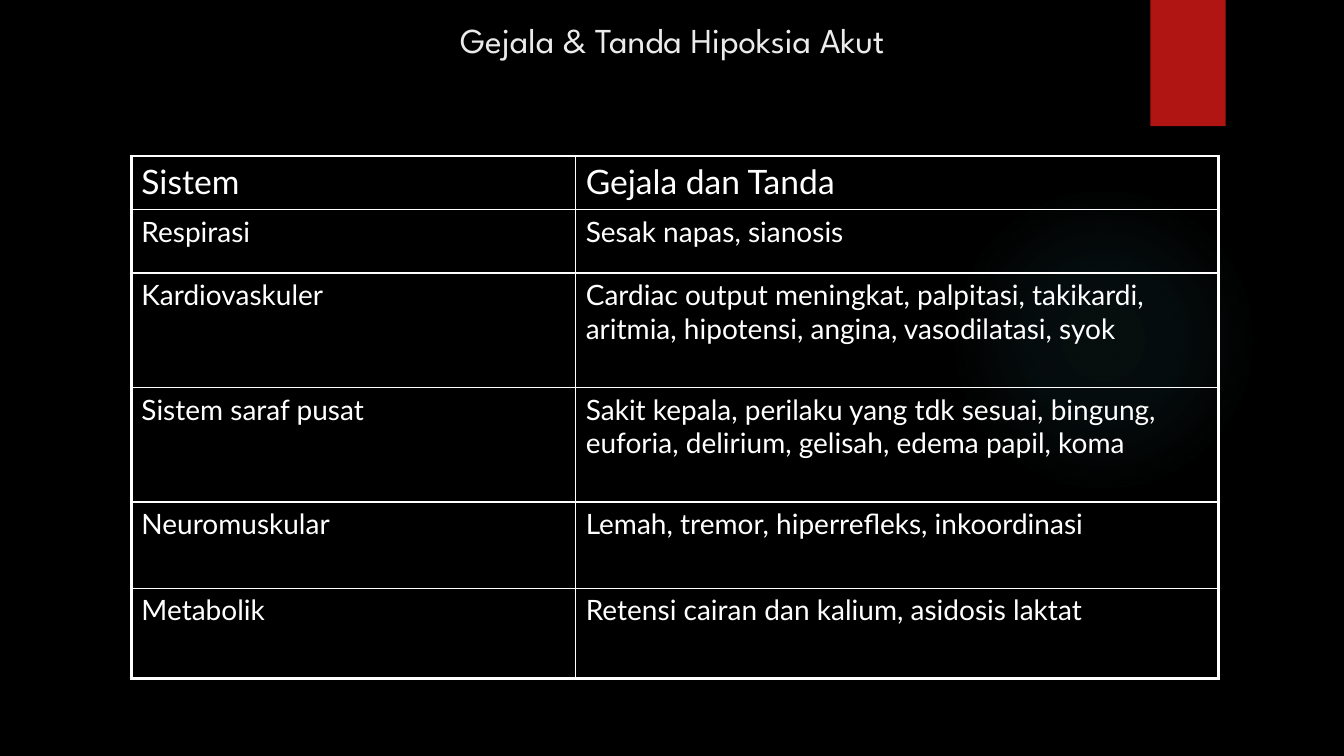
from lxml import etree
from pptx import Presentation
from pptx import util as u
from pptx.dml.color import RGBColor
from pptx.enum import shapes, text
from pptx.oxml import ns

BLACK = RGBColor(0x00, 0x00, 0x00)
WHITE = RGBColor(0xFF, 0xFF, 0xFF)
TITLE_GREY = RGBColor(0xEB, 0xEB, 0xEB)
RED = RGBColor(0xB0, 0x15, 0x13)
TEAL = RGBColor(0x50, 0xB9, 0xC1)

SYMPTOMS = [
    ("Sistem", "Gejala dan Tanda"),
    ("Respirasi", "Sesak napas, sianosis"),
    ("Kardiovaskuler", "Cardiac output meningkat, palpitasi, takikardi, "
     "aritmia, hipotensi, angina, vasodilatasi, syok"),
    ("Sistem saraf pusat", "Sakit kepala, perilaku yang tdk sesuai, bingung, "
     "euforia, delirium, gelisah, edema papil, koma"),
    ("Neuromuskular", "Lemah, tremor, hiperrefleks, inkoordinasi"),
    ("Metabolik", "Retensi cairan dan kalium, asidosis laktat"),
]
COLUMN_WIDTHS = [11.2, 16.2]
ROW_HEIGHTS = [1.35, 1.6, 2.88, 2.89, 2.17, 2.27]


def add_child(parent, tag, **attributes):
    return etree.SubElement(parent, ns.qn(tag), attributes)


class SlideBuilder:
    title_font, body_font = "League Spartan", "Lato"
    title_size, header_size, body_size = u.Pt(25), u.Pt(24), u.Pt(20)
    outer_line, inner_line = u.Pt(2.25), u.Pt(1)

    def __init__(self, presentation):
        self.slide = presentation.slides.add_slide(presentation.slide_layouts[6])
        self.slide.background.fill.solid()
        self.slide.background.fill.fore_color.rgb = BLACK

    def style(self, paragraph, font, size, color):
        paragraph.font.name = font
        paragraph.font.size = size
        paragraph.font.color.rgb = color

    def shape(self, kind, left, top, width, height, color):
        shape = self.slide.shapes.add_shape(
            kind, u.Cm(left), u.Cm(top), u.Cm(width), u.Cm(height))
        shape.shadow.inherit = False
        shape.line.fill.background()
        shape.fill.solid()
        shape.fill.fore_color.rgb = color
        return shape

    def glow(self, left, top, size, color, stops):
        shape = self.shape(shapes.MSO_SHAPE.OVAL, left, top, size, size, color)
        solid = shape.element.spPr.find(ns.qn("a:solidFill"))
        gradient = etree.Element(ns.qn("a:gradFill"), rotWithShape="1")
        stop_list = add_child(gradient, "a:gsLst")
        for position, opacity in stops:
            stop = add_child(stop_list, "a:gs", pos=str(position * 1000))
            tint = add_child(stop, "a:srgbClr", val=str(color))
            add_child(tint, "a:alpha", val=str(opacity * 1000))
        circle = add_child(gradient, "a:path", path="circle")
        add_child(circle, "a:fillToRect", l="50000", t="50000", r="50000", b="50000")
        solid.getparent().replace(solid, gradient)

    def title(self, left, top, width, height, words):
        box = self.slide.shapes.add_textbox(
            u.Cm(left), u.Cm(top), u.Cm(width), u.Cm(height))
        box.text_frame.word_wrap = True
        paragraph = box.text_frame.paragraphs[0]
        paragraph.text = words
        paragraph.alignment = text.PP_ALIGN.CENTER
        self.style(paragraph, self.title_font, self.title_size, TITLE_GREY)

    def borders(self, cell, outer_sides):
        properties = cell._tc.get_or_add_tcPr()
        for side in "LRTB":
            width = self.outer_line if side in outer_sides else self.inner_line
            line = add_child(properties, f"a:ln{side}", w=str(int(width)))
            add_child(add_child(line, "a:solidFill"), "a:srgbClr", val=str(WHITE))

    def table(self, left, top, widths, heights, rows):
        table = self.slide.shapes.add_table(
            len(rows), len(widths), u.Cm(left), u.Cm(top),
            u.Cm(sum(widths)), u.Cm(sum(heights))).table
        for column, width in zip(table.columns, widths):
            column.width = u.Cm(width)
        for r, (height, words) in enumerate(zip(heights, rows)):
            table.rows[r].height = u.Cm(height)
            size = self.body_size if r else self.header_size
            for c, content in enumerate(words):
                cell = table.cell(r, c)
                outer_sides = "L" if c == 0 else "R"
                if r == 0:
                    outer_sides += "T"
                if r == len(rows) - 1:
                    outer_sides += "B"
                self.borders(cell, outer_sides)
                cell.fill.background()
                cell.text = content
                paragraph = cell.text_frame.paragraphs[0]
                paragraph.font.bold = False
                self.style(paragraph, self.body_font, size, WHITE)


def main():
    presentation = Presentation()
    presentation.slide_width, presentation.slide_height = u.Cm(33.87), u.Cm(19.05)
    builder = SlideBuilder(presentation)

    # Backdrop: soft glow and red bookmark
    builder.glow(23.9, 4.65, 7.82, TEAL, [(0, 7), (36, 6), (69, 0)])
    builder.shape(shapes.MSO_SHAPE.RECTANGLE, 28.99, 0, 1.9, 3.18, RED)

    # Symptom table
    builder.table(3.31, 3.93, COLUMN_WIDTHS, ROW_HEIGHTS, SYMPTOMS)

    # Heading
    builder.title(7.06, 0.33, 19.76, 3.18, "Gejala & Tanda Hipoksia Akut")

    presentation.save("out.pptx")


if __name__ == "__main__":
    main()
